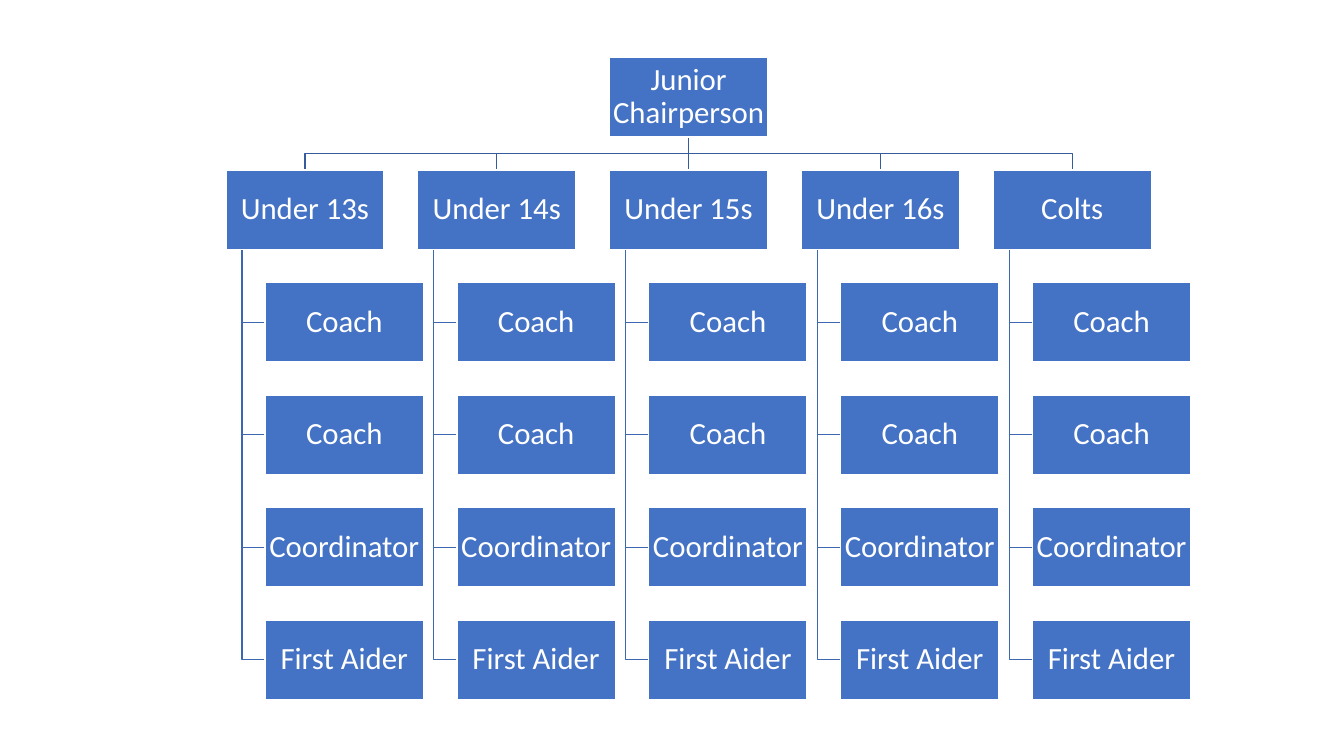
import pptx
import pptx.dml.color
import pptx.enum.shapes
import pptx.enum.text
import pptx.oxml
import pptx.util

EMU_PER_PX = 9144
BOX_WIDTH, BOX_HEIGHT = 157, 79
STEM_INSET, ROLE_INDENT = 16, 39
BOX_FILL, WHITE = "4472C4", "FFFFFF"
TEAM_LINE, ROLE_LINE = "365B9D", "3E67B2"
TEAMS = ["Under 13s", "Under 14s", "Under 15s", "Under 16s", "Colts"]
ROLES = ["Coach", "Coach", "Coordinator", "First Aider"]


def px(length):
    return pptx.util.Emu(round(length * EMU_PER_PX))


def colour(code):
    return pptx.dml.color.RGBColor.from_string(code)


def write(shape, text, size=22, font="Calibri", ink=WHITE, inset=2, spacing=0.9):
    frame = shape.text_frame
    frame.word_wrap = True
    frame.vertical_anchor = pptx.enum.text.MSO_ANCHOR.MIDDLE
    frame.margin_left = frame.margin_right = px(inset)
    frame.margin_top = frame.margin_bottom = px(inset)
    para = frame.paragraphs[0]
    para.alignment = pptx.enum.text.PP_ALIGN.CENTER
    para.line_spacing = spacing
    span = para.add_run()
    span.text = text
    span.font.size = pptx.util.Pt(size)
    span.font.name = font
    span.font.color.rgb = colour(ink)


def draw_box(page, left, top, text):
    box = page.shapes.add_shape(
        pptx.enum.shapes.MSO_SHAPE.RECTANGLE,
        px(left), px(top), px(BOX_WIDTH), px(BOX_HEIGHT))
    box.shadow.inherit = False
    box.fill.solid()
    box.fill.fore_color.rgb = colour(BOX_FILL)
    box.line.color.rgb = colour(WHITE)
    box.line.width = pptx.util.Pt(1)
    write(box, text)


def draw_branch(page, points, ink):
    corners = [(px(across), px(down)) for across, down in points]
    start, end = corners[0], corners[-1]
    if start[0] == end[0]:
        branch = page.shapes.add_connector(
            pptx.enum.shapes.MSO_CONNECTOR.STRAIGHT, *start, *end)
        properties = branch._element.spPr
        properties.append(pptx.oxml.parse_xml(
            '<a:effectLst xmlns:a="http://schemas.openxmlformats.org/drawingml/2006/main"/>'))
    else:
        outline = page.shapes.build_freeform(*start)
        outline.add_line_segments(corners[1:], close=False)
        branch = outline.convert_to_shape()
        branch.shadow.inherit = False
        branch.fill.background()
    branch.line.color.rgb = colour(ink)
    branch.line.width = pptx.util.Pt(1)


def draw_team(page, left, tops, team):
    stem = left + STEM_INSET
    role_left = left + ROLE_INDENT
    for top in tops[1:]:
        middle = top + BOX_HEIGHT / 2
        draw_branch(page, [(stem, tops[0] + BOX_HEIGHT), (stem, middle),
                           (role_left, middle)], ROLE_LINE)
    draw_box(page, left, tops[0], team)
    for top, role in zip(tops[1:], ROLES):
        draw_box(page, role_left, top, role)


def draw_chart(page, left, top, width, height):
    column_step = (width - ROLE_INDENT - BOX_WIDTH) / (len(TEAMS) - 1)
    row_step = (height - BOX_HEIGHT) / len(ROLES + ["Team"])
    lefts = [left + column_step * column for column in range(len(TEAMS))]
    tops = [top + row_step * row for row in range(len(ROLES) + 2)]
    head_left = lefts[len(TEAMS) // 2]
    centre = head_left + BOX_WIDTH / 2
    head_bottom = top + BOX_HEIGHT
    elbow = (head_bottom + tops[1]) / 2
    for team_left in lefts:
        team_centre = team_left + BOX_WIDTH / 2
        draw_branch(page, [(centre, head_bottom), (centre, elbow),
                           (team_centre, elbow), (team_centre, tops[1])], TEAM_LINE)
    draw_box(page, head_left, top, "Junior Chairperson")
    for team_left, team in zip(lefts, TEAMS):
        draw_team(page, team_left, tops[1:], team)


def main():
    deck = pptx.Presentation()
    deck.slide_width, deck.slide_height = px(1333), px(750)
    page = deck.slides.add_slide(deck.slide_layouts[6])
    draw_chart(page, 224, 57, 957, 637)
    deck.save("out.pptx")


if __name__ == "__main__":
    main()
